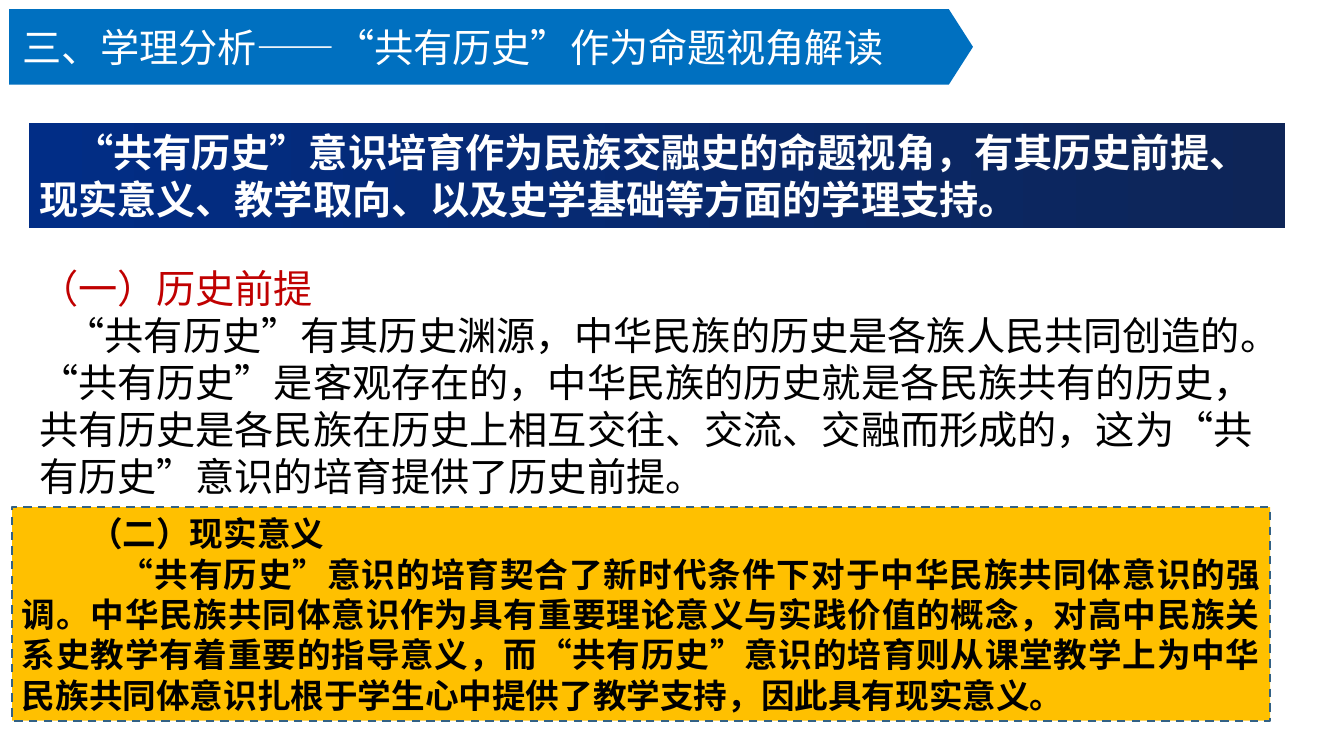
"""Build a slide on the rationale for the shared-history perspective."""
import pptx
import pptx.util
import pptx.dml.color
import pptx.enum.dml
import pptx.enum.shapes
import pptx.enum.text
import pptx.oxml.ns
import lxml.etree

Pt = pptx.util.Pt
SHAPE = pptx.enum.shapes.MSO_SHAPE
ANCHOR = pptx.enum.text.MSO_ANCHOR
ALIGN = pptx.enum.text.PP_ALIGN

TITLE = "三、学理分析——“共有历史”作为命题视角解读"
THESIS = "“共有历史”意识培育作为民族交融史的命题视角，有其历史前提、现实意义、教学取向、以及史学基础等方面的学理支持。"
PREMISE = (
    "（一）历史前提",
    "“共有历史”有其历史渊源，中华民族的历史是各族人民共同创造的。“共有历史”是客观存在的，中华民族的历史就是各民族共有的历史，共有历史是各民族在历史上相互交往、交流、交融而形成的，这为“共有历史”意识的培育提供了历史前提。",
)
MEANING = (
    "（二）现实意义",
    "“共有历史”意识的培育契合了新时代条件下对于中华民族共同体意识的强调。中华民族共同体意识作为具有重要理论意义与实践价值的概念，对高中民族关系史教学有着重要的指导意义，而“共有历史”意识的培育则从课堂教学上为中华民族共同体意识扎根于学生心中提供了教学支持，因此具有现实意义。",
)
FONT = "Noto Sans CJK SC"
COLORS = {"ribbon": "0070C0", "white": "FFFFFF", "black": "000000", "red": "C00000",
          "navy": "012D86", "night": "0E2557", "gold": "FFC000", "edge": "326185"}
BOXES = {"ribbon": (6.5, 6.5, 688.5, 54), "title": (8.6, 16.6, 646.6, 71.3),
         "thesis": (20.9, 87.8, 897.1, 74.9), "premise": (20.9, 185, 897.1, 177.1),
         "meaning": (8.6, 362.2, 898.6, 152.6)}


def rgb(name):
    """Return the named colour."""
    return pptx.dml.color.RGBColor.from_string(COLORS[name])


def box(name):
    """Return the named frame as lengths."""
    return [Pt(v) for v in BOXES[name]]


def write(sp, text, *, color, size=28, bold=False, indent=0, align=ALIGN.LEFT,
          anchor=ANCHOR.TOP, spacing=1.0):
    """Write one paragraph into a shape, after any text already there."""
    tf = sp.text_frame
    tf.word_wrap = True
    tf.auto_size = pptx.enum.text.MSO_AUTO_SIZE.NONE
    tf.vertical_anchor = anchor
    p = tf.add_paragraph() if tf.text else tf.paragraphs[0]
    p.alignment = align
    p.line_spacing = spacing
    p._p.get_or_add_pPr().set("indent", str(Pt(indent)))
    r = p.add_run()
    r.text = text
    r.font.size = Pt(size)
    r.font.bold = bold
    r.font.color.rgb = rgb(color)
    r.font.name = FONT
    rpr = r._r.get_or_add_rPr()
    rpr.set("lang", "zh-CN")
    ea = lxml.etree.SubElement(rpr, pptx.oxml.ns.qn("a:ea"))
    ea.set("typeface", FONT)


def add_panel(s, kind, name, fill=None):
    """Add a flat shape in its named frame."""
    sp = s.shapes.add_shape(kind, *box(name))
    sp.shadow.inherit = False
    sp.line.fill.background()
    if fill:
        sp.fill.solid()
        sp.fill.fore_color.rgb = rgb(fill)
    return sp


def main():
    """Compose and save the slide."""
    prs = pptx.Presentation()
    prs.slide_width, prs.slide_height = Pt(960), Pt(540)
    s = prs.slides.add_slide(prs.slide_layouts[5])

    ribbon = add_panel(s, SHAPE.PENTAGON, "ribbon", "ribbon")
    ribbon.adjustments[0] = 0.32
    title = s.shapes.title
    title.left, title.top, title.width, title.height = box("title")
    write(title, TITLE, color="white", spacing=0.9)
    title._element.addprevious(ribbon._element)

    premise = s.shapes.add_textbox(*box("premise"))
    for text, color, indent in zip(PREMISE, ("red", "black"), (0, 19)):
        write(premise, text, color=color, indent=indent)

    thesis = add_panel(s, SHAPE.RECTANGLE, "thesis")
    thesis.fill.gradient()
    thesis.fill.gradient_angle = 0
    for stop, color in zip(thesis.fill.gradient_stops, ("navy", "night")):
        stop.color.rgb = rgb(color)
    write(thesis, THESIS, color="white", bold=True, indent=25, anchor=ANCHOR.MIDDLE)

    meaning = add_panel(s, SHAPE.RECTANGLE, "meaning", "gold")
    meaning.line.color.rgb = rgb("edge")
    meaning.line.width = Pt(1.5)
    meaning.line.dash_style = pptx.enum.dml.MSO_LINE.DASH
    for text, indent in zip(MEANING, (48, 70)):
        write(meaning, text, color="black", size=24, bold=True, indent=indent,
              align=ALIGN.JUSTIFY, anchor=ANCHOR.MIDDLE)

    prs.save("out.pptx")


if __name__ == "__main__":
    main()
